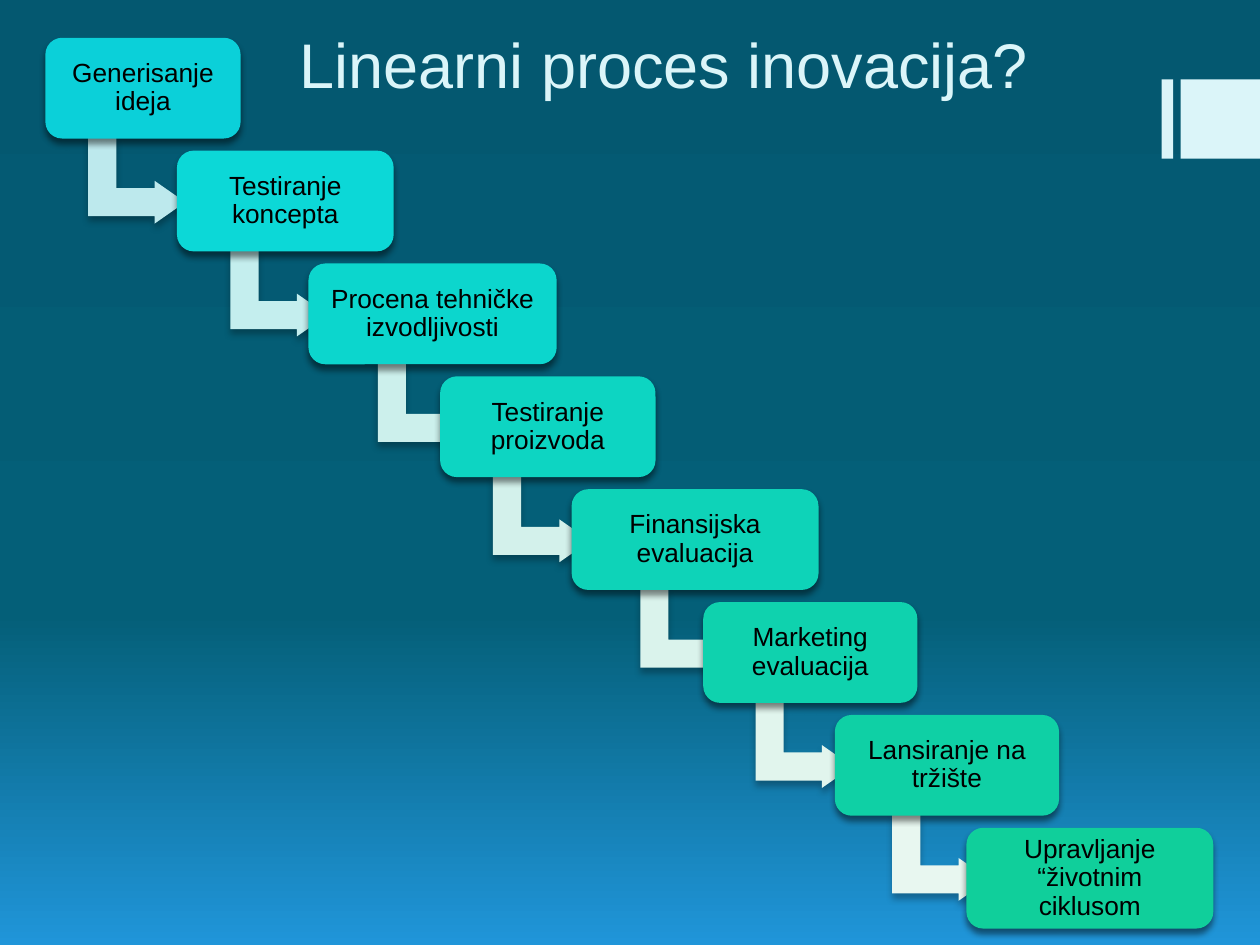
from copy import deepcopy
from lxml.etree import SubElement as Sub
from pptx import Presentation as Deck
from pptx.dml.color import RGBColor as RGB
from pptx.enum.shapes import MSO_SHAPE as Kind
from pptx.enum.text import MSO_ANCHOR as Anchor, PP_ALIGN as Align
from pptx.oxml.ns import qn
from pptx.util import Inches, Pt

PALE = RGB(0xDB, 0xF5, 0xF9)
BLACK = RGB(0, 0, 0)
SKY = [
    (0, RGB(0x04, 0x58, 0x70)),
    (0.65, RGB(0x04, 0x5F, 0x78)),
    (1, RGB(0x20, 0x95, 0xD9)),
]
STEPS = [
    ("Generisanje ideja", 1.55, RGB(0x0B, 0xD0, 0xD9), RGB(0xBD, 0xE9, 0xED)),
    ("Testiranje koncepta", 1.72, RGB(0x0C, 0xD8, 0xD7), RGB(0xC4, 0xEE, 0xEE)),
    ("Procena tehničke izvodljivosti", 1.97, RGB(0x0C, 0xD6, 0xCD), RGB(0xCC, 0xF0, 0xEC)),
    ("Testiranje proizvoda", 1.71, RGB(0x0D, 0xD5, 0xC2), RGB(0xD3, 0xF1, 0xEB)),
    ("Finansijska evaluacija", 1.96, RGB(0x0E, 0xD3, 0xB8), RGB(0xDA, 0xF3, 0xEC)),
    ("Marketing evaluacija", 1.7, RGB(0x0F, 0xD2, 0xAE), RGB(0xE1, 0xF5, 0xED)),
    ("Lansiranje na tržište", 1.78, RGB(0x0F, 0xD0, 0xA5), RGB(0xE8, 0xF7, 0xF0)),
    ("Upravljanje “životnim ciklusom", 1.96, RGB(0x10, 0xCF, 0x9B), None),
]


def style(item, form):
    """Set each attribute named in the dict."""
    for key, value in form.items():
        setattr(item, key, value)


def write(shape, text, inset, font, para):
    """Fill a shape with one formatted paragraph."""
    frame = shape.text_frame
    sides = ("left", "right", "top", "bottom")
    style(frame, {f"margin_{side}": Inches(inset) for side in sides})
    style(frame, {"word_wrap": True, "vertical_anchor": Anchor.MIDDLE})
    line = frame.paragraphs[0]
    style(line, para)
    run = line.add_run()
    run.text = text
    style(run.font, {"name": "Arial", "size": Pt(font["size"])})
    run.font.color.rgb = font["color"]


def add_form(slide, kind, box, color, adjust=()):
    """Add a plain filled shape without a line or shadow."""
    shape = slide.shapes.add_shape(kind, *map(Inches, box))
    shape.shadow.inherit = False
    shape.fill.solid()
    shape.fill.fore_color.rgb = color
    shape.line.fill.background()
    for spot, value in enumerate(adjust):
        shape.adjustments[spot] = value
    return shape


def add_shade(shape, alpha, blur):
    """Drop a soft black shadow straight below a shape."""
    effects = shape.element.spPr.find(qn("a:effectLst"))
    form = {"blurRad": Pt(blur), "dist": Pt(3), "dir": 5400000, "rotWithShape": 0}
    shade = Sub(effects, qn("a:outerShdw"), {key: str(val) for key, val in form.items()})
    color = Sub(shade, qn("a:srgbClr"), val="000000")
    Sub(color, qn("a:alpha"), val=str(alpha * 1000))


def add_sky(slide):
    """Paint the background gradient from top to bottom."""
    fill = slide.background.fill
    fill.gradient()
    fill.gradient_angle = 270
    stops = slide.element.xpath(".//a:gsLst")[0]
    stops.append(deepcopy(stops[-1]))
    for stop, (place, color) in zip(fill.gradient_stops, SKY):
        stop.position = place
        stop.color.rgb = color


def add_badge(slide, left, top, size):
    """Add the thin bar and the square at the right edge."""
    for shift, width in ((0, 0.09), (0.15, size)):
        add_form(slide, Kind.RECTANGLE, (left + shift, top, width, size), PALE)


def add_title(slide, left, top, width, height):
    """Add the slide heading."""
    box = slide.shapes.add_textbox(*map(Inches, (left, top, width, height)))
    write(box, "Linearni proces inovacija?", 0, {"size": 36, "color": PALE}, {})


def add_step(slide, left, top, step):
    """Add one step and the bent arrow that leads to the next."""
    text, width, color, tint = step
    if tint:
        box = (left + width / 2 - 0.39, top + 0.75, 0.68, 0.77)
        arrow = add_form(slide, Kind.BENT_UP_ARROW, box, tint, (0.328, 0.25, 0.358))
        arrow.rotation = 90
        add_shade(arrow, 28, 4)
    card = add_form(slide, Kind.ROUNDED_RECTANGLE, (left, top, width, 0.8), color, (0.167,))
    add_shade(card, 48, 3.8)
    form = {"alignment": Align.CENTER, "line_spacing": 0.9}
    write(card, text, 0.1, {"size": 15, "color": BLACK}, form)


def add_stairs(slide, left, top, width, height):
    """Spread the steps evenly down a diagonal."""
    gaps = len(STEPS) - 1
    across = (width - STEPS[-1][1]) / gaps
    down = (height - 0.8) / gaps
    for rank, step in enumerate(STEPS):
        add_step(slide, left + rank * across, top + rank * down, step)


def main():
    """Build and save the slide."""
    deck = Deck()
    style(deck, {"slide_width": Inches(10), "slide_height": Inches(7.5)})
    slide = deck.slides.add_slide(deck.slide_layouts[6])
    add_sky(slide)
    add_badge(slide, 9.22, 0.63, 0.63)
    add_title(slide, 2.38, 0.2, 6, 0.6)
    add_stairs(slide, 0.36, 0.3, 9.27, 7.07)
    deck.save("out.pptx")


if __name__ == "__main__":
    main()
